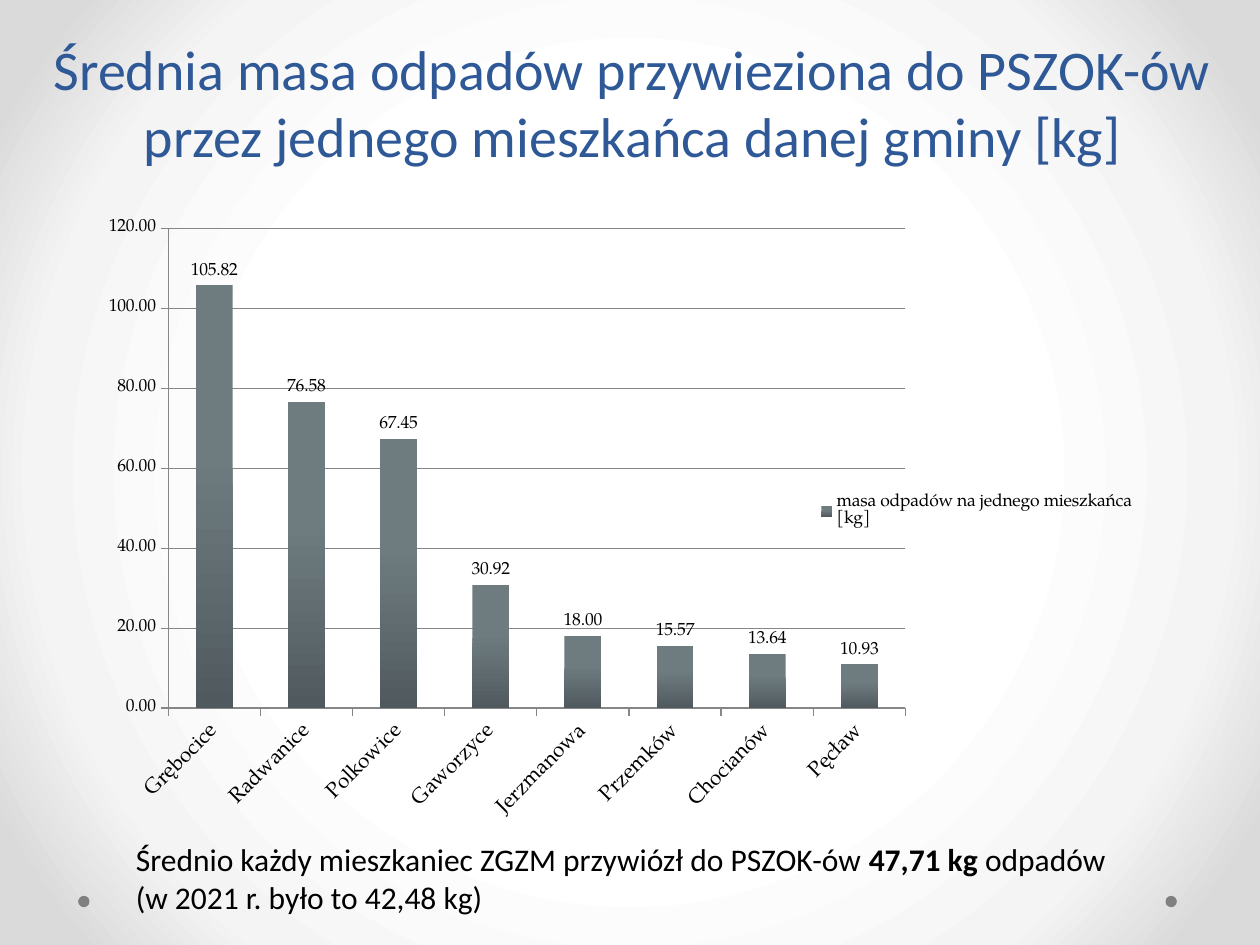
import pptx
import pptx.chart.data
import pptx.dml.color
import pptx.enum.chart
import pptx.enum.shapes
import pptx.enum.text
import pptx.oxml
import pptx.oxml.ns
import pptx.util
from dataclasses import dataclass

Inches = pptx.util.Inches
Pt = pptx.util.Pt
qn = pptx.oxml.ns.qn


@dataclass(frozen=True)
class Theme:
    title: str = "2F5897"
    ink: str = "000000"
    dot: str = "808080"
    grid: str = "868686"
    bar_top: str = "6E7C80"
    bar_bottom: str = "505A5E"
    backdrop: tuple = ((50, "FFFFFF"), (76, "F4F4F4"), (92, "DADADA"))
    text_font: str = "Calibri"
    chart_font: str = "TeX Gyre Pagella"
    title_size: int = 32
    note_size: int = 18
    category_size: int = 12
    chart_size: int = 10


THEME = Theme()
TOWNS = {
    "Grębocice": 105.82, "Radwanice": 76.58, "Polkowice": 67.45,
    "Gaworzyce": 30.92, "Jerzmanowa": 18.00, "Przemków": 15.57,
    "Chocianów": 13.64, "Pęcław": 10.93,
}


def colour(code):
    return pptx.dml.color.RGBColor.from_string(code)


def assign(target, values):
    for name, value in values.items():
        setattr(target, name, value)


def style_font(font, name, size, code, bold=False):
    assign(font, {"name": name, "size": Pt(size), "bold": bold})
    font.color.rgb = colour(code)


def paint_backdrop(page):
    page.background.fill.gradient()
    gradient = page.element.find(".//" + qn("a:gradFill"))
    for child in list(gradient):
        gradient.remove(child)
    stops = "".join(
        f'<a:gs pos="{percent * 1000}"><a:srgbClr val="{code}"/></a:gs>'
        for percent, code in THEME.backdrop
    )
    namespace = pptx.oxml.ns.nsdecls("a")
    gradient.append(pptx.oxml.parse_xml(f"<a:gsLst {namespace}>{stops}</a:gsLst>"))
    gradient.append(pptx.oxml.parse_xml(
        f'<a:path {namespace} path="circle">'
        '<a:fillToRect l="50000" t="50000" r="50000" b="50000"/></a:path>'
    ))


def add_dot(page, box):
    dot = page.shapes.add_shape(pptx.enum.shapes.MSO_SHAPE.OVAL, *map(Inches, box))
    dot.shadow.inherit = False
    dot.fill.solid()
    dot.fill.fore_color.rgb = colour(THEME.dot)
    dot.line.fill.background()


def add_text(page, box, spans, size, code, align, anchor):
    frame = page.shapes.add_textbox(*map(Inches, box)).text_frame
    assign(frame, {"word_wrap": True, "vertical_anchor": anchor})
    para = frame.paragraphs[0]
    para.alignment = align
    for text, bold in spans:
        span = para.add_run()
        span.text = text
        style_font(span.font, THEME.text_font, size, code, bold)


def place_plot(chart, left, top, width, height):
    area = chart.element.find(".//" + qn("c:plotArea"))
    for layout in area.findall(qn("c:layout")):
        area.remove(layout)
    settings = {"layoutTarget": "inner", "xMode": "edge", "yMode": "edge",
                "x": left, "y": top, "w": width, "h": height}
    parts = "".join(f'<c:{tag} val="{value}"/>' for tag, value in settings.items())
    area.insert(0, pptx.oxml.parse_xml(
        f'<c:layout {pptx.oxml.ns.nsdecls("c")}>'
        f"<c:manualLayout>{parts}</c:manualLayout></c:layout>"
    ))


def style_axes(chart):
    marks = pptx.enum.chart.XL_TICK_MARK
    sizes = ((chart.category_axis, THEME.category_size), (chart.value_axis, THEME.chart_size))
    for axis, size in sizes:
        assign(axis, {"major_tick_mark": marks.OUTSIDE, "minor_tick_mark": marks.NONE})
        style_font(axis.tick_labels.font, THEME.chart_font, size, THEME.ink)
        axis.format.line.color.rgb = colour(THEME.grid)
    chart.element.find(".//" + qn("c:catAx")).find(
        ".//" + qn("a:bodyPr")).set("rot", str(-45 * 60000))
    values = chart.value_axis
    assign(values, {"minimum_scale": 0, "maximum_scale": 120, "major_unit": 20,
                    "has_major_gridlines": True})
    values.major_gridlines.format.line.color.rgb = colour(THEME.grid)
    assign(values.tick_labels, {"number_format": "0.00", "number_format_is_linked": False})


def style_bars(plot):
    assign(plot, {"gap_width": 150, "vary_by_categories": False, "has_data_labels": True})
    fill = plot.series[0].format.fill
    fill.gradient()
    fill.gradient_angle = 270
    for stop, code, position in zip(
            fill.gradient_stops, (THEME.bar_top, THEME.bar_bottom), (0.4, 1)):
        stop.color.rgb = colour(code)
        stop.position = position
    labels = plot.data_labels
    assign(labels, {"show_value": True, "number_format": "0.00",
                    "number_format_is_linked": False,
                    "position": pptx.enum.chart.XL_LABEL_POSITION.OUTSIDE_END})
    style_font(labels.font, THEME.chart_font, THEME.chart_size, THEME.ink)


def add_waste_chart(page, box):
    data = pptx.chart.data.CategoryChartData(number_format="0.00")
    data.categories = list(TOWNS)
    data.add_series("masa odpadów na jednego mieszkańca [kg]", list(TOWNS.values()))
    chart = page.shapes.add_chart(
        pptx.enum.chart.XL_CHART_TYPE.COLUMN_CLUSTERED, *map(Inches, box), data
    ).chart
    assign(chart, {"has_title": False, "has_legend": True})
    style_font(chart.font, THEME.chart_font, THEME.chart_size, THEME.ink)
    assign(chart.legend, {"position": pptx.enum.chart.XL_LEGEND_POSITION.RIGHT,
                          "include_in_layout": False})
    style_font(chart.legend.font, THEME.chart_font, THEME.chart_size, THEME.ink)
    style_axes(chart)
    style_bars(chart.plots[0])
    place_plot(chart, 0.07, 0.04, 0.7, 0.78)


def build_waste_slide(page):
    align = pptx.enum.text.PP_ALIGN
    anchor = pptx.enum.text.MSO_ANCHOR
    paint_backdrop(page)
    for left in (0.62, 9.25):
        add_dot(page, (left, 7.11, 0.09, 0.09))
    title = "Średnia masa odpadów przywieziona do PSZOK-ów przez jednego mieszkańca danej gminy [kg]"
    add_text(page, (0.12, 0, 9.8, 1.39), [(title, False)],
             THEME.title_size, THEME.title, align.CENTER, anchor.BOTTOM)
    note = [("Średnio każdy mieszkaniec ZGZM przywiózł do PSZOK-ów ", False),
            ("47,71 kg ", True),
            ("odpadów (w 2021 r. było to 42,48 kg)", False)]
    add_text(page, (0.98, 6.62, 8.11, 0.71), note,
             THEME.note_size, THEME.ink, align.LEFT, anchor.TOP)
    add_waste_chart(page, (0.75, 1.62, 8.36, 4.88))


def main():
    deck = pptx.Presentation()
    assign(deck, {"slide_width": Inches(10), "slide_height": Inches(7.5)})
    build_waste_slide(deck.slides.add_slide(deck.slide_layouts[6]))
    deck.save("out.pptx")


if __name__ == "__main__":
    main()
